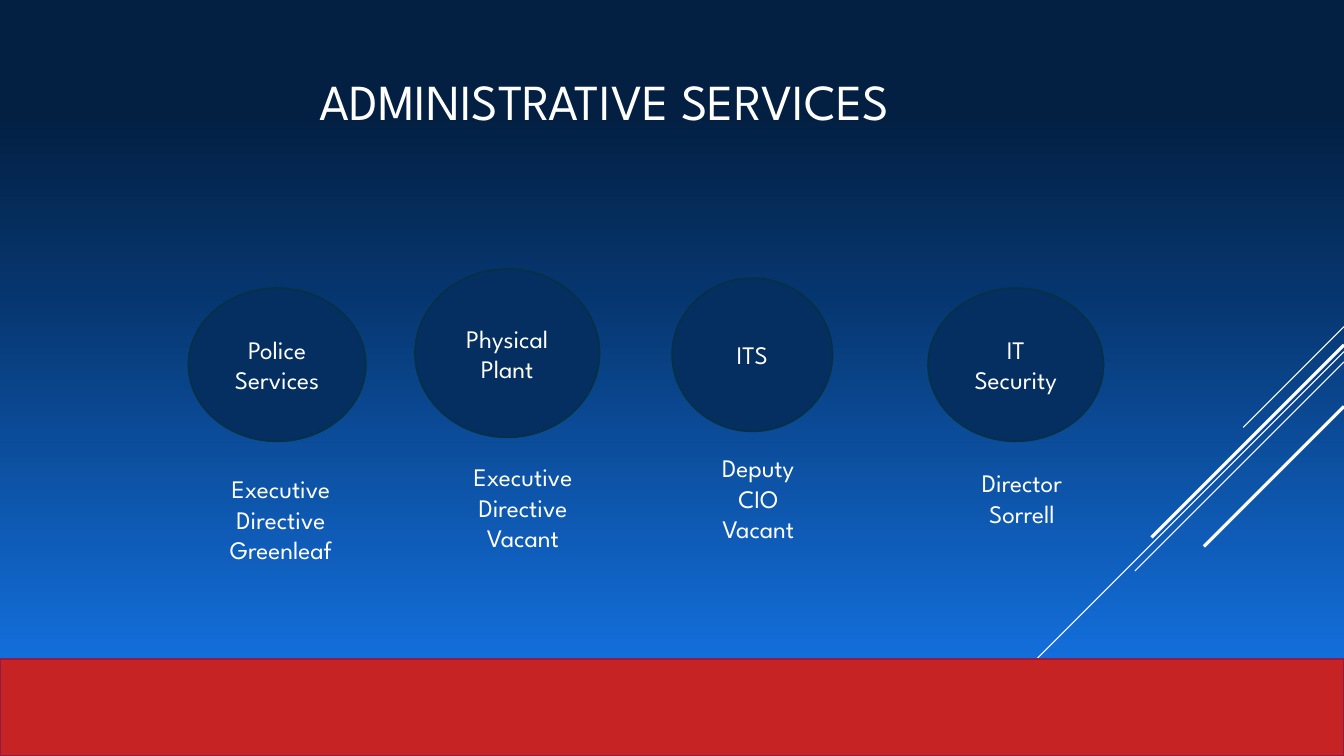
from pptx import Presentation, oxml
from pptx import util as u
from pptx.dml.color import RGBColor
from pptx.enum import shapes, text
from pptx.oxml.ns import nsdecls, qn
from lxml import etree

FONT = "League Spartan"
WHITE = RGBColor(0xFF, 0xFF, 0xFF)
NAVY = RGBColor(0x05, 0x2F, 0x61)
NAVY_EDGE = RGBColor(0x04, 0x31, 0x48)
RED = RGBColor(0xC6, 0x23, 0x24)
RED_EDGE = RGBColor(0x92, 0x1A, 0x46)
SKY = RGBColor(0x16, 0x7B, 0xF3)
OCEAN = RGBColor(0x06, 0x35, 0x6D)
MIDNIGHT = RGBColor(0x03, 0x1F, 0x41)

SLIDE_WIDTH, SLIDE_HEIGHT = 33.87, 19.05
BACKGROUND_STOPS = [(2, SKY), (62, OCEAN), (86, MIDNIGHT)]
DIAGONALS = [
    (8.23, 2.54, 0.75),
    (8.86, 8.28, 0.75),
    (9.12, 5.27, 0.75),
    (8.69, 4.85, 2.25),
    (10.24, 3.53, 2.25),
]
DEPARTMENTS = [
    ("Police Services", (4.75, 7.26, 4.47, 3.86),
     "Executive Directive Greenleaf", (5.11, 11.81, 3.94, 2.57)),
    ("Physical Plant", (10.46, 6.78, 4.65, 4.24),
     "Executive Directive Vacant", (11.25, 11.51, 3.86, 2.57)),
    ("ITS", (16.94, 7.01, 4.04, 3.86),
     "Deputy CIO\nVacant", (17.42, 11.28, 3.38, 2.57)),
    ("IT Security", (23.39, 7.26, 4.42, 3.86),
     "Director Sorrell", (24.23, 11.66, 3.05, 1.8)),
]


def lengths(box):
    return [u.Cm(value) for value in box]


def set_background(slide):
    stops = "".join(
        f'<a:gs pos="{position * 1000}"><a:srgbClr val="{color}"/></a:gs>'
        for position, color in BACKGROUND_STOPS
    )
    background = oxml.parse_xml(
        f'<p:bg {nsdecls("p", "a")}><p:bgPr><a:gradFill rotWithShape="1">'
        f'<a:gsLst>{stops}</a:gsLst><a:lin ang="16200000" scaled="0"/>'
        '</a:gradFill><a:effectLst/></p:bgPr></p:bg>'
    )
    slide.element.find(qn("p:cSld")).insert(0, background)


def write_text(shape, content, size):
    frame = shape.text_frame
    frame.text = content
    frame.word_wrap = True
    for paragraph in frame.paragraphs:
        paragraph.alignment = text.PP_ALIGN.CENTER
        for run in paragraph.runs:
            run.font.name = FONT
            run.font.size = u.Pt(size)
            run.font.color.rgb = WHITE


def add_diagonal(slide, top, extent, width):
    line = slide.shapes.add_connector(
        shapes.MSO_CONNECTOR.STRAIGHT,
        *lengths((SLIDE_WIDTH, top, SLIDE_WIDTH - extent, top + extent)),
    )
    line.line.color.rgb = WHITE
    line.line.width = u.Pt(width)
    etree.SubElement(line.element.spPr, qn("a:effectLst"))


def add_filled_shape(slide, kind, box, fill, edge):
    shape = slide.shapes.add_shape(kind, *lengths(box))
    shape.shadow.inherit = False
    shape.fill.solid()
    shape.fill.fore_color.rgb = fill
    shape.line.color.rgb = edge
    shape.line.width = u.Pt(1.25)
    return shape


def set_title(slide, content, box):
    title = slide.shapes.title
    title.left, title.top, title.width, title.height = lengths(box)
    write_text(title, content, 36)
    title.text_frame.vertical_anchor = text.MSO_ANCHOR.MIDDLE


def add_department(slide, name, circle_box, leader, leader_box):
    circle = add_filled_shape(
        slide, shapes.MSO_SHAPE.OVAL, circle_box, NAVY, NAVY_EDGE)
    write_text(circle, name, 18)
    circle.text_frame.vertical_anchor = text.MSO_ANCHOR.MIDDLE
    label = slide.shapes.add_textbox(*lengths(leader_box))
    write_text(label, leader, 18)
    label.text_frame.auto_size = text.MSO_AUTO_SIZE.SHAPE_TO_FIT_TEXT


def main():
    presentation = Presentation()
    presentation.slide_width = u.Cm(SLIDE_WIDTH)
    presentation.slide_height = u.Cm(SLIDE_HEIGHT)
    slide = presentation.slides.add_slide(presentation.slide_layouts[5])
    set_background(slide)
    for diagonal in DIAGONALS:
        add_diagonal(slide, *diagonal)
    add_filled_shape(slide, shapes.MSO_SHAPE.RECTANGLE,
                     (0, 16.61, SLIDE_WIDTH, 2.44), RED, RED_EDGE)
    set_title(slide, "ADMINISTRATIVE SERVICES", (1.9, 0.46, 26.67, 4.14))
    for department in DEPARTMENTS:
        add_department(slide, *department)
    presentation.save("out.pptx")


if __name__ == "__main__":
    main()
